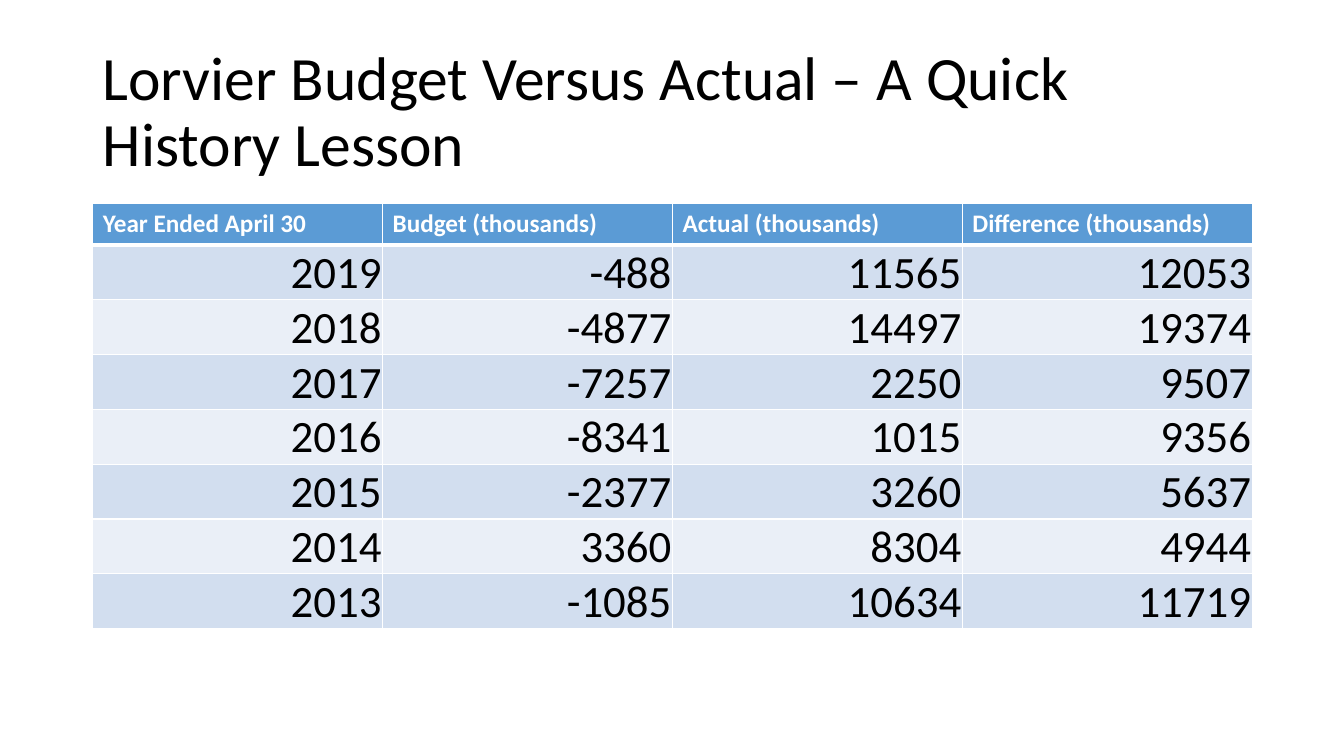
from lxml import etree
from pptx import Presentation
from pptx.dml.color import RGBColor
from pptx.enum.text import MSO_ANCHOR, PP_ALIGN
from pptx.oxml.ns import qn
from pptx.util import Inches, Pt

MIDDLE, BOTTOM, TOP = MSO_ANCHOR.MIDDLE, MSO_ANCHOR.BOTTOM, MSO_ANCHOR.TOP
LEFT, RIGHT = PP_ALIGN.LEFT, PP_ALIGN.RIGHT
FONT = "Calibri"
WHITE, BLACK, BLUE = "FFFFFF", "000000", "5B9BD5"
BANDS = ("D2DEEF", "EAEFF7")
HEADER_HEIGHT, YEAR_HEIGHT = 0.41, 0.54

TITLE = "Lorvier Budget Versus Actual – A Quick History Lesson"
HEADERS = ("Year Ended April 30", "Budget (thousands)",
           "Actual (thousands)", "Difference (thousands)")
RESULTS = (
    (2019, -488, 11565),
    (2018, -4877, 14497),
    (2017, -7257, 2250),
    (2016, -8341, 1015),
    (2015, -2377, 3260),
    (2014, 3360, 8304),
    (2013, -1085, 10634),
)


def colour(value):
    """Turn a hex string into a colour."""
    return RGBColor.from_string(value)


def add_span(para, text, size, ink, bold=False):
    """Add one formatted run to a paragraph."""
    span = para.add_run()
    span.text = text
    span.font.name = FONT
    span.font.size = Pt(size)
    span.font.bold = bold
    span.font.color.rgb = colour(ink)


def add_title(page, left, top, width, height):
    """Place the slide title in the given box."""
    box = page.shapes.add_textbox(Inches(left), Inches(top), Inches(width), Inches(height))
    frame = box.text_frame
    frame.word_wrap = True
    frame.vertical_anchor = MIDDLE
    para = frame.paragraphs[0]
    para.line_spacing = 0.9
    add_span(para, TITLE, 44, BLACK)


def set_borders(cell, bottom):
    """Draw white borders around a cell, with the given bottom width in points."""
    properties = cell._tc.get_or_add_tcPr()
    widths = {"a:lnL": 1, "a:lnR": 1, "a:lnT": 1, "a:lnB": bottom}
    for position, (side, width) in enumerate(widths.items()):
        line = etree.Element(qn(side), w=str(Pt(width)))
        fill = etree.SubElement(line, qn("a:solidFill"))
        etree.SubElement(fill, qn("a:srgbClr"), val=WHITE)
        properties.insert(position, line)


def fill_cell(cell, text, fill, size, ink, bold, align, anchor, bottom):
    """Write and style one table cell."""
    cell.fill.solid()
    cell.fill.fore_color.rgb = colour(fill)
    cell.vertical_anchor = anchor
    para = cell.text_frame.paragraphs[0]
    para.alignment = align
    add_span(para, text, size, ink, bold)
    set_borders(cell, bottom)


def add_history(page, left, top, width):
    """Place the budget table, with equal columns across the given width."""
    height = HEADER_HEIGHT + YEAR_HEIGHT * len(RESULTS)
    table = page.shapes.add_table(len(RESULTS) + 1, len(HEADERS), Inches(left), Inches(top),
                                  Inches(width), Inches(height)).table
    for column in table.columns:
        column.width = Inches(width / len(HEADERS))
    table.rows[0].height = Inches(HEADER_HEIGHT)
    for index, header in enumerate(HEADERS):
        fill_cell(table.cell(0, index), header, BLUE, 18, WHITE, True, LEFT, TOP, 3)
    for row, (year, budget, actual) in enumerate(RESULTS, start=1):
        table.rows[row].height = Inches(YEAR_HEIGHT)
        for index, value in enumerate((year, budget, actual, actual - budget)):
            cell = table.cell(row, index)
            cell.margin_left = cell.margin_right = cell.margin_top = Inches(0.01)
            cell.margin_bottom = Inches(0)
            fill_cell(cell, str(value), BANDS[(row - 1) % 2], 32, BLACK, False,
                      RIGHT, BOTTOM, 1)
        if row == 1:
            for cell in table.rows[row].cells:
                cell._tc.tcPr.find(qn("a:lnT")).set("w", str(Pt(3)))


def main():
    """Build the slide and save the deck."""
    deck = Presentation()
    deck.slide_width, deck.slide_height = Inches(13.33), Inches(7.5)
    page = deck.slides.add_slide(deck.slide_layouts[6])
    add_title(page, 0.92, 0.4, 11.5, 1.45)
    add_history(page, 0.92, 2.02, 11.5)
    deck.save("out.pptx")


if __name__ == "__main__":
    main()
